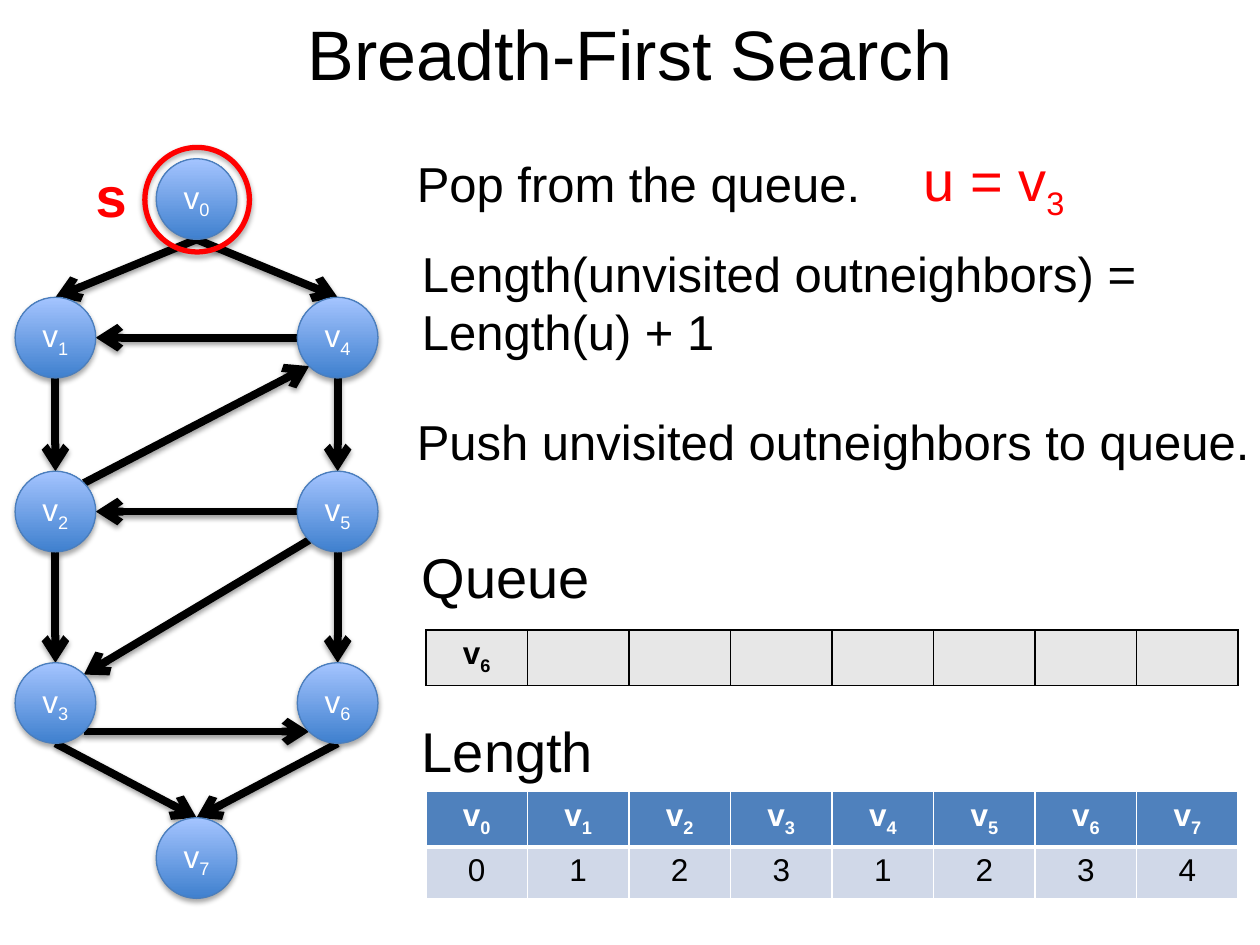
import math
from lxml import etree
from pptx import Presentation
from pptx import util as u
from pptx.dml.color import RGBColor
from pptx.enum import shapes, text
from pptx.oxml import ns

Inches, Pt = u.Inches, u.Pt
COLORS = {"ink": "000000", "paper": "FFFFFF", "mark": "FF0000", "node_low": "3F80CE",
          "node_high": "A4C4FF", "node_line": "4B7EBC", "head": "4F81BD",
          "body": "D0D8E8", "queue": "E7E7E7"}
NODE = 0.64
LEFT, MIDDLE, RIGHT = 0, 1.12, 2.24
ROWS = [0, 1.1, 2.48, 4.0, 5.23]
NODES = {"v_0": (MIDDLE, ROWS[0]), "v_1": (LEFT, ROWS[1]), "v_2": (LEFT, ROWS[2]),
         "v_3": (LEFT, ROWS[3]), "v_4": (RIGHT, ROWS[1]), "v_5": (RIGHT, ROWS[2]),
         "v_6": (RIGHT, ROWS[3]), "v_7": (MIDDLE, ROWS[4])}
# Each edge leaves and enters at an angle on the node, clockwise from the right
EDGES = [("v_2", -45, "v_4", 135), ("v_0", 90, "v_1", -90), ("v_0", 90, "v_4", -90),
         ("v_1", 90, "v_2", -90), ("v_4", 180, "v_1", 0), ("v_5", 135, "v_3", -45),
         ("v_2", 90, "v_3", -90), ("v_5", 180, "v_2", 0), ("v_3", 90, "v_7", -90),
         ("v_6", 90, "v_7", -90), ("v_3", 45, "v_6", 135), ("v_5", 90, "v_6", -90),
         ("v_4", 90, "v_5", -90)]
LENGTHS = [0, 1, 2, 3, 1, 2, 3, 4]


def rgb(name):
    return RGBColor.from_string(COLORS[name])


def add_xml(parent, tag, **attributes):
    return etree.SubElement(parent, ns.qn(tag), attributes)


def write(para, label, size, color, bold=False, align=None):
    """Fill a paragraph; what follows an underscore becomes a subscript."""
    para.alignment = align
    para.font.name, para.font.size, para.font.bold = "Arial", Pt(size), bold
    para.font.color.rgb = rgb(color)
    base, _, subscript = label.partition("_")
    if base:
        para.add_run().text = base
    if subscript:
        span = para.add_run()
        span.text = subscript
        span._r.get_or_add_rPr().set("baseline", "-25000")


def set_shadow(shape, opacity, distance):
    effects = add_xml(shape._element.spPr, "a:effectLst")
    shadow = add_xml(effects, "a:outerShdw", blurRad=str(Pt(3.1)), dist=str(Pt(distance)),
                     dir="5400000", rotWithShape="0")
    color = add_xml(shadow, "a:srgbClr", val=COLORS["ink"])
    add_xml(color, "a:alpha", val=str(opacity * 1000))


def add_ellipse(page, left, top, size, line, width):
    oval = page.shapes.add_shape(shapes.MSO_SHAPE.OVAL, Inches(left), Inches(top),
                                 Inches(size), Inches(size))
    oval.line.color.rgb = rgb(line)
    oval.line.width = Pt(width)
    set_shadow(oval, 35, 1.8)
    return oval


def add_node(page, label, left, top):
    node = add_ellipse(page, left, top, NODE, "node_line", 0.75)
    node.fill.gradient()
    node.fill.gradient_angle = 90
    for stop, color in zip(node.fill.gradient_stops, ("node_low", "node_high")):
        stop.color.rgb = rgb(color)
    frame = node.text_frame
    frame.margin_left = frame.margin_right = 0
    frame.vertical_anchor = text.MSO_ANCHOR.MIDDLE
    write(frame.paragraphs[0], label, 18, "paper", align=text.PP_ALIGN.CENTER)


def add_edge(page, start, end):
    edge = page.shapes.add_connector(shapes.MSO_CONNECTOR.STRAIGHT,
                                     *(Inches(value) for value in start + end))
    edge.line.color.rgb = rgb("ink")
    edge.line.width = Pt(4.5)
    add_xml(edge.line._get_or_add_ln(), "a:tailEnd", type="arrow")
    set_shadow(edge, 38, 1.6)


def add_label(page, box, lines, size, color="ink", bold=False):
    frame = page.shapes.add_textbox(*(Inches(value) for value in box)).text_frame
    frame.word_wrap = False
    frame.auto_size = text.MSO_AUTO_SIZE.SHAPE_TO_FIT_TEXT
    for index, line in enumerate(lines):
        para = frame.add_paragraph() if index else frame.paragraphs[0]
        write(para, line, size, color, bold)


def set_border(cell, sides, color, width):
    properties = cell._tc.get_or_add_tcPr()
    for index, side in enumerate(sides):
        line = etree.Element(ns.qn(f"a:ln{side}"), w=str(Pt(width)))
        add_xml(add_xml(line, "a:solidFill"), "a:srgbClr", val=COLORS[color])
        properties.insert(index, line)


def add_grid(page, left, top, width, rows, styles):
    """Add a table; styles gives fill, text colour, bold, border and bottom width per row."""
    height = 0.41
    table = page.shapes.add_table(len(rows), len(rows[0]), Inches(left), Inches(top),
                                  Inches(width), Inches(height * len(rows))).table
    table.first_row = table.horz_banding = False
    for row, values, (fill, color, bold, border, bottom) in zip(table.rows, rows, styles):
        row.height = Inches(height)
        for cell, value in zip(row.cells, values):
            cell.fill.solid()
            cell.fill.fore_color.rgb = rgb(fill)
            write(cell.text_frame.paragraphs[0], value, 18, color, bold,
                  text.PP_ALIGN.CENTER)
            set_border(cell, "LRT", border, 1)
            bottom_index = 3
            line = etree.Element(ns.qn("a:lnB"), w=str(Pt(bottom)))
            add_xml(add_xml(line, "a:solidFill"), "a:srgbClr", val=COLORS[border])
            cell._tc.get_or_add_tcPr().insert(bottom_index, line)


def add_title(page, left, top, width, height):
    title = page.shapes.title
    title.left, title.top = Inches(left), Inches(top)
    title.width, title.height = Inches(width), Inches(height)
    title.text_frame.auto_size = text.MSO_AUTO_SIZE.NONE
    title.text_frame.vertical_anchor = text.MSO_ANCHOR.MIDDLE
    write(title.text_frame.paragraphs[0], "Breadth-First Search", 40, "ink",
          align=text.PP_ALIGN.CENTER)


def add_graph(page, left, top):
    def rim(name, angle):
        x, y = NODES[name]
        turn, radius = math.radians(angle), NODE / 2
        return (left + x + radius * (1 + math.cos(turn)),
                top + y + radius * (1 + math.sin(turn)))

    for source, leave, target, enter in EDGES:
        add_edge(page, rim(source, leave), rim(target, enter))
    for name, (x, y) in NODES.items():
        add_node(page, name, left + x, top + y)
    ring = add_ellipse(page, left + 1.03, top - 0.09, 0.83, "mark", 3)
    ring.fill.background()
    add_label(page, (left + 0.54, top - 0.03, 0.45, 0.64), ["s"], 32, "mark", True)


def add_steps(page, left, top):
    add_label(page, (left, top, 3.76, 0.57), ["Pop from the queue."], 28)
    add_label(page, (left + 4.02, top - 0.06, 1.35, 0.64), ["u = v_3"], 32, "mark")
    add_label(page, (left + 0.04, top + 0.71, 5.93, 1.04),
              ["Length(unvisited outneighbors) =", "Length(u) + 1"], 28)
    add_label(page, (left, top + 2.05, 6.88, 0.57),
              ["Push unvisited outneighbors to queue."], 28)


def add_state(page, left, top, width):
    """Place the queue and the length table under their headings."""
    add_label(page, (left, top, 1.55, 0.64), ["Queue"], 32)
    add_grid(page, left + 0.13, top + 0.74, width, [["v_6"] + [""] * 7],
             [("queue", "ink", True, "ink", 1)])
    add_label(page, (left, top + 1.38, 1.57, 0.64), ["Length"], 32)
    add_grid(page, left + 0.13, top + 2.02, width,
             [list(NODES), [str(length) for length in LENGTHS]],
             [("head", "paper", True, "paper", 3), ("body", "ink", False, "paper", 1)])


def main():
    deck = Presentation()
    deck.slide_width, deck.slide_height = Inches(10), Inches(7.5)
    page = deck.slides.add_slide(deck.slide_layouts[5])
    add_title(page, 0.5, 0.06, 9, 0.71)
    add_graph(page, 0.12, 1.26)
    add_steps(page, 3.21, 1.17)
    add_state(page, 3.25, 4.26, 6.45)
    deck.save("out.pptx")


if __name__ == "__main__":
    main()
